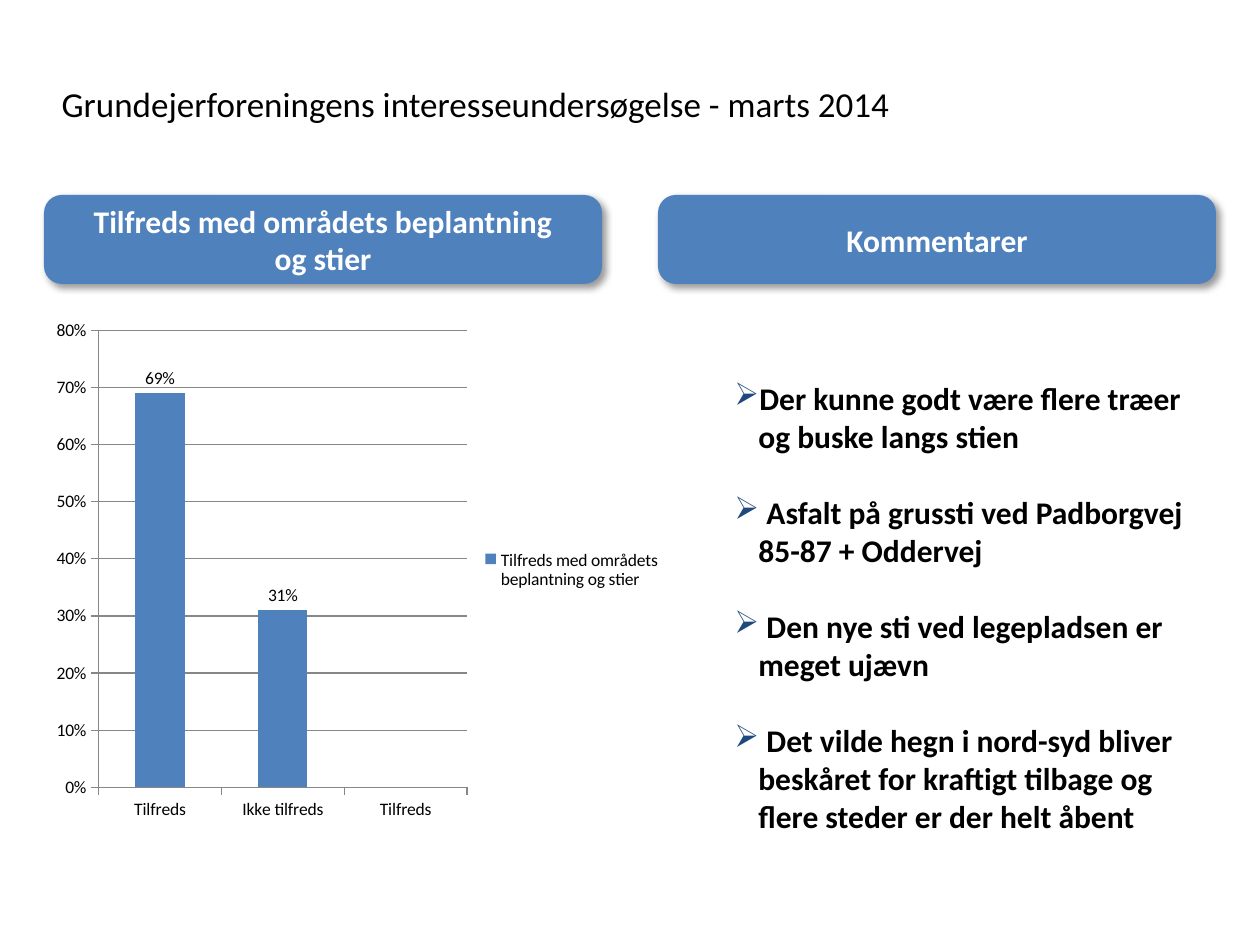
from lxml.etree import SubElement
from pptx import Presentation
from pptx.chart.data import CategoryChartData
from pptx.dml.color import RGBColor
from pptx.enum.chart import XL_CHART_TYPE as CT, XL_LABEL_POSITION as LP
from pptx.enum.chart import XL_LEGEND_POSITION as LEG, XL_TICK_MARK as TICK
from pptx.enum.shapes import MSO_SHAPE
from pptx.enum.text import MSO_ANCHOR, PP_ALIGN
from pptx.oxml import parse_xml
from pptx.oxml.ns import nsdecls, qn
from pptx.util import Pt

PX = 914400 / 126
BLUE, NAVY, BLACK, WHITE, GREY = "4F81BD", "1F497D", "000000", "FFFFFF", "878787"


def px(*values):
    return [round(v * PX) for v in values]


def write(p, text, size=18, color=BLACK, bold=False, align=PP_ALIGN.LEFT):
    p.alignment = align
    r = p.add_run()
    r.text = text
    r.font.name, r.font.size, r.font.bold = "Calibri", Pt(size), bold
    r.font.color.rgb = RGBColor.from_string(color)


prs = Presentation()
prs.slide_width, prs.slide_height = px(1260, 945)
s = prs.slides.add_slide(prs.slide_layouts[5])

# Title
title = s.shapes.title
title.left, title.top, title.width, title.height = px(49, 47, 1076, 113)
title.text_frame.vertical_anchor = MSO_ANCHOR.MIDDLE
write(title.text_frame.paragraphs[0],
      "Grundejerforeningens interesseundersøgelse - marts 2014", size=20)

# Comments
comments = [
    "Der kunne godt være flere træer og buske langs stien",
    " Asfalt på grussti ved Padborgvej 85-87 + Oddervej",
    " Den nye sti ved legepladsen er meget ujævn",
    " Det vilde hegn i nord-syd bliver beskåret for kraftigt tilbage og flere steder er der helt åbent",
]
tf = s.shapes.add_textbox(*px(722, 373, 494, 547)).text_frame
tf.word_wrap = True
indent = px(24)[0]
for i, comment in enumerate(comments):
    p = tf.add_paragraph() if i else tf.paragraphs[0]
    write(p, comment, bold=True)
    if i:
        p.space_before = Pt(22)
    pPr = p._p.get_or_add_pPr()
    pPr.set("marL", str(indent))
    pPr.set("indent", str(-indent))
    SubElement(SubElement(pPr, qn("a:buClr")), qn("a:srgbClr"), val=NAVY)
    SubElement(pPr, qn("a:buChar"), char="➢")

# Column headings
headings = [(44, ["Tilfreds med områdets beplantning", "og stier"]),
            (658, ["Kommentarer"])]
for left, lines in headings:
    sp = s.shapes.add_shape(MSO_SHAPE.ROUNDED_RECTANGLE, *px(left, 195, 558, 89))
    sp.adjustments[0] = 0.2
    sp.fill.solid()
    sp.fill.fore_color.rgb = RGBColor.from_string(BLUE)
    sp.line.fill.background()
    sp._element.spPr.append(parse_xml(
        f'<a:effectLst {nsdecls("a")}><a:outerShdw blurRad="{Pt(4)}" dist="{Pt(3)}" '
        f'dir="2700000" algn="tl" rotWithShape="0"><a:srgbClr val="{BLACK}">'
        '<a:alpha val="40000"/></a:srgbClr></a:outerShdw></a:effectLst>'))
    tf = sp.text_frame
    tf.word_wrap = True
    tf.vertical_anchor = MSO_ANCHOR.MIDDLE
    tf.margin_left, tf.margin_top, tf.margin_right, tf.margin_bottom = px(5, 5, 5, 5)
    for i, line in enumerate(lines):
        p = tf.add_paragraph() if i else tf.paragraphs[0]
        write(p, line, color=WHITE, bold=True, align=PP_ALIGN.CENTER)

# Satisfaction chart
data = CategoryChartData(number_format="0%")
data.categories = ["Tilfreds", "Ikke tilfreds", "Tilfreds"]
data.add_series("Tilfreds med områdets beplantning og stier", [0.69, 0.31, None])
chart = s.shapes.add_chart(CT.COLUMN_CLUSTERED, *px(44, 310, 630, 520), data).chart
chart.has_title = False
chart.font.name, chart.font.size = "Calibri", Pt(10)
chart.font.color.rgb = RGBColor.from_string(BLACK)
chart.has_legend = True
chart.legend.position = LEG.RIGHT
chart.legend.include_in_layout = False

value_axis = chart.value_axis
value_axis.minimum_scale, value_axis.maximum_scale, value_axis.major_unit = 0, 0.8, 0.1
value_axis.has_major_gridlines = True
value_axis.tick_labels.number_format = "0%"
value_axis.tick_labels.number_format_is_linked = False
for axis in (chart.category_axis, value_axis):
    axis.major_tick_mark, axis.minor_tick_mark = TICK.OUTSIDE, TICK.NONE
for part in (chart.category_axis, value_axis, value_axis.major_gridlines):
    part.format.line.color.rgb = RGBColor.from_string(GREY)
    part.format.line.width = Pt(0.75)

plot = chart.plots[0]
plot.gap_width = 150
plot.vary_by_categories = False
fill = plot.series[0].format.fill
fill.solid()
fill.fore_color.rgb = RGBColor.from_string(BLUE)
plot.has_data_labels = True
labels = plot.data_labels
labels.show_value = True
labels.number_format, labels.number_format_is_linked = "0%", False
labels.position = LP.OUTSIDE_END

prs.save("out.pptx")
